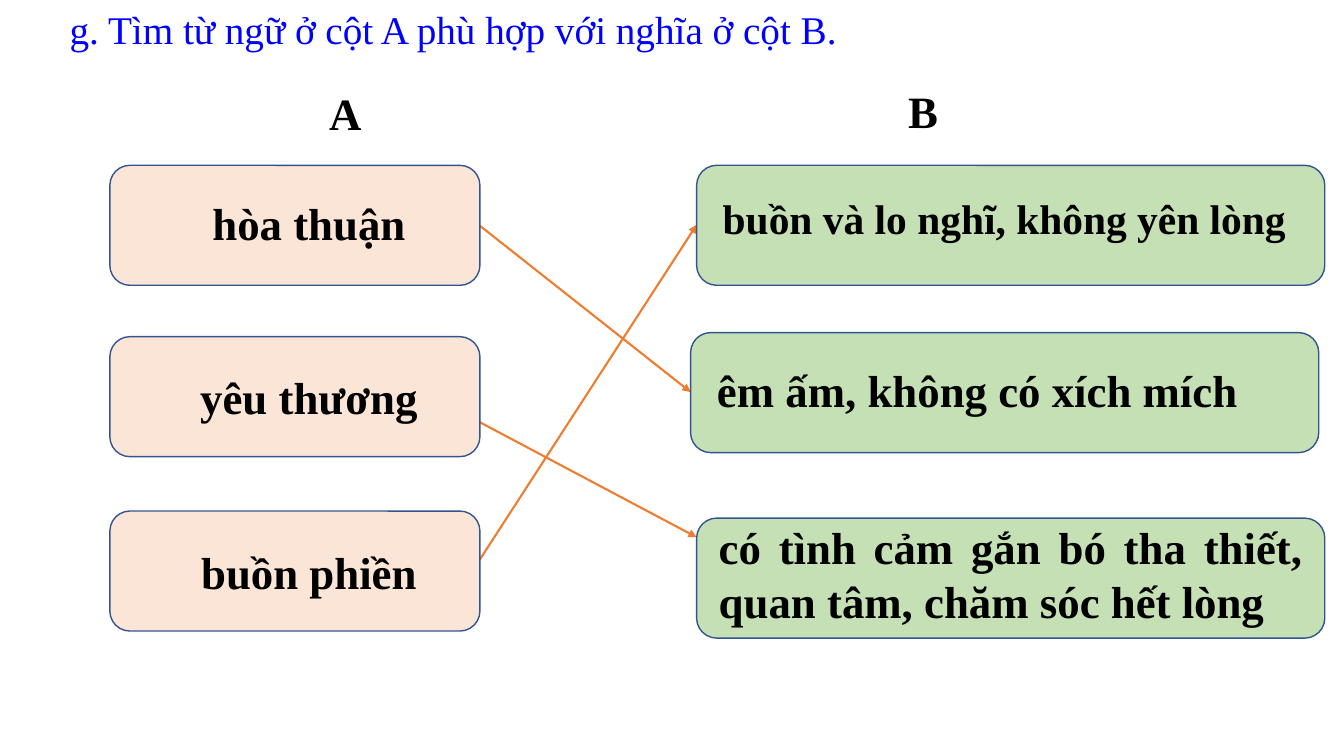
from dataclasses import dataclass

import pptx
import pptx.dml.color
import pptx.enum.shapes
import pptx.enum.text
import pptx.oxml
import pptx.oxml.ns
import pptx.slide
import pptx.text.text
import pptx.util

Inches = pptx.util.Inches
RGBColor = pptx.dml.color.RGBColor
Align = pptx.enum.text.PP_ALIGN
Anchor = pptx.enum.text.MSO_ANCHOR

FONT = "Times New Roman"
BLUE = RGBColor(0x00, 0x00, 0xFF)
BLACK = RGBColor(0x00, 0x00, 0x00)
PEACH = RGBColor(0xFB, 0xE5, 0xD6)
GREEN = RGBColor(0xC5, 0xE0, 0xB4)
NAVY = RGBColor(0x32, 0x54, 0x91)
ORANGE = RGBColor(0xED, 0x7D, 0x31)

CARD_HEIGHT = 1.19
TERM_WIDTH = 3.67
MEANING_WIDTH = 6.23
LABEL_WIDTH = 5.93
LABEL_HEIGHT = 0.74


@dataclass(frozen=True)
class Card:
    left: float
    top: float
    width: float
    fill: RGBColor


@dataclass(frozen=True)
class Label:
    text: str
    left: float
    top: float
    width: float = LABEL_WIDTH
    height: float = LABEL_HEIGHT
    size: float = 32
    justified: bool = False


@dataclass(frozen=True)
class Arrow:
    start_x: float
    start_y: float
    end_x: float
    end_y: float


ARROWS = [
    Arrow(4.29, 3.94, 6.91, 5.33),
    Arrow(4.76, 2.24, 6.85, 3.89),
    Arrow(4.76, 5.55, 6.91, 2.23),
]

CARDS = [
    Card(1.09, 1.64, TERM_WIDTH, PEACH),
    Card(1.09, 3.34, TERM_WIDTH, PEACH),
    Card(1.09, 5.07, TERM_WIDTH, PEACH),
    Card(6.91, 1.64, MEANING_WIDTH, GREEN),
    Card(6.85, 3.3, MEANING_WIDTH, GREEN),
    Card(6.91, 5.14, MEANING_WIDTH, GREEN),
]

LABELS = [
    Label("A", 2.56, 0.74, 1.73, 0.82),
    Label("B", 7.75, 0.57, 2.81, 1.12),
    Label("hòa thuận", 0.1, 1.87),
    Label("yêu thương", 0.1, 3.6),
    Label("buồn phiền", 0.1, 5.33),
    Label("buồn và lo nghĩ, không yên lòng", 7, 1.82, size=29.6),
    Label("êm ấm, không có xích mích", 6.73, 3.53),
    Label("có tình cảm gắn bó tha thiết, quan tâm, chăm sóc hết lòng",
          7.03, 5.11, 5.99, 1.18, justified=True),
]


def write_text(frame: pptx.text.text.TextFrame, text: str, size: float,
               color: RGBColor, bold: bool, justified: bool) -> None:
    frame.word_wrap = True
    frame.auto_size = pptx.enum.text.MSO_AUTO_SIZE.NONE
    frame.vertical_anchor = Anchor.TOP if justified else Anchor.MIDDLE
    paragraph = frame.paragraphs[0]
    paragraph.alignment = Align.JUSTIFY if justified else Align.CENTER
    paragraph.line_spacing = 1.0 if justified else 0.9
    paragraph.space_before = pptx.util.Pt(0)
    paragraph.space_after = pptx.util.Pt(0 if justified else 6)
    run = paragraph.add_run()
    run.text = text
    run.font.name = FONT
    run.font.size = pptx.util.Pt(size)
    run.font.bold = bold
    run.font.color.rgb = color


def add_title(slide: pptx.slide.Slide, text: str) -> None:
    title = slide.shapes.title
    title.left, title.top = Inches(0.59), Inches(0)
    title.width, title.height = Inches(8.78), Inches(0.57)
    write_text(title.text_frame, text, 28, BLUE, bold=False, justified=True)


def add_arrow(slide: pptx.slide.Slide, arrow: Arrow) -> None:
    connector = slide.shapes.add_connector(
        pptx.enum.shapes.MSO_CONNECTOR.STRAIGHT,
        Inches(arrow.start_x), Inches(arrow.start_y),
        Inches(arrow.end_x), Inches(arrow.end_y))
    connector.line.color.rgb = ORANGE
    connector.line.width = pptx.util.Pt(1.5)
    tail = pptx.oxml.parse_xml(
        f'<a:tailEnd {pptx.oxml.ns.nsdecls("a")} type="triangle"/>')
    connector.line._get_or_add_ln().append(tail)
    connector._element.spPr.append(pptx.oxml.parse_xml(
        f'<a:effectLst {pptx.oxml.ns.nsdecls("a")}/>'))


def add_card(slide: pptx.slide.Slide, card: Card) -> None:
    shape = slide.shapes.add_shape(
        pptx.enum.shapes.MSO_SHAPE.ROUNDED_RECTANGLE,
        Inches(card.left), Inches(card.top),
        Inches(card.width), Inches(CARD_HEIGHT))
    shape.shadow.inherit = False
    shape.fill.solid()
    shape.fill.fore_color.rgb = card.fill
    shape.line.color.rgb = NAVY
    shape.line.width = pptx.util.Pt(1)


def add_label(slide: pptx.slide.Slide, label: Label) -> None:
    box = slide.shapes.add_textbox(
        Inches(label.left), Inches(label.top),
        Inches(label.width), Inches(label.height))
    write_text(box.text_frame, label.text, label.size, BLACK,
               bold=True, justified=label.justified)


def main() -> None:
    presentation = pptx.Presentation()
    presentation.slide_width = Inches(13.33)
    presentation.slide_height = Inches(7.5)
    slide = presentation.slides.add_slide(presentation.slide_layouts[5])
    add_title(slide, "g. Tìm từ ngữ ở cột A phù hợp với nghĩa ở cột B.")
    for arrow in ARROWS:
        add_arrow(slide, arrow)
    for card in CARDS:
        add_card(slide, card)
    for label in LABELS:
        add_label(slide, label)
    presentation.save("out.pptx")


if __name__ == "__main__":
    main()
